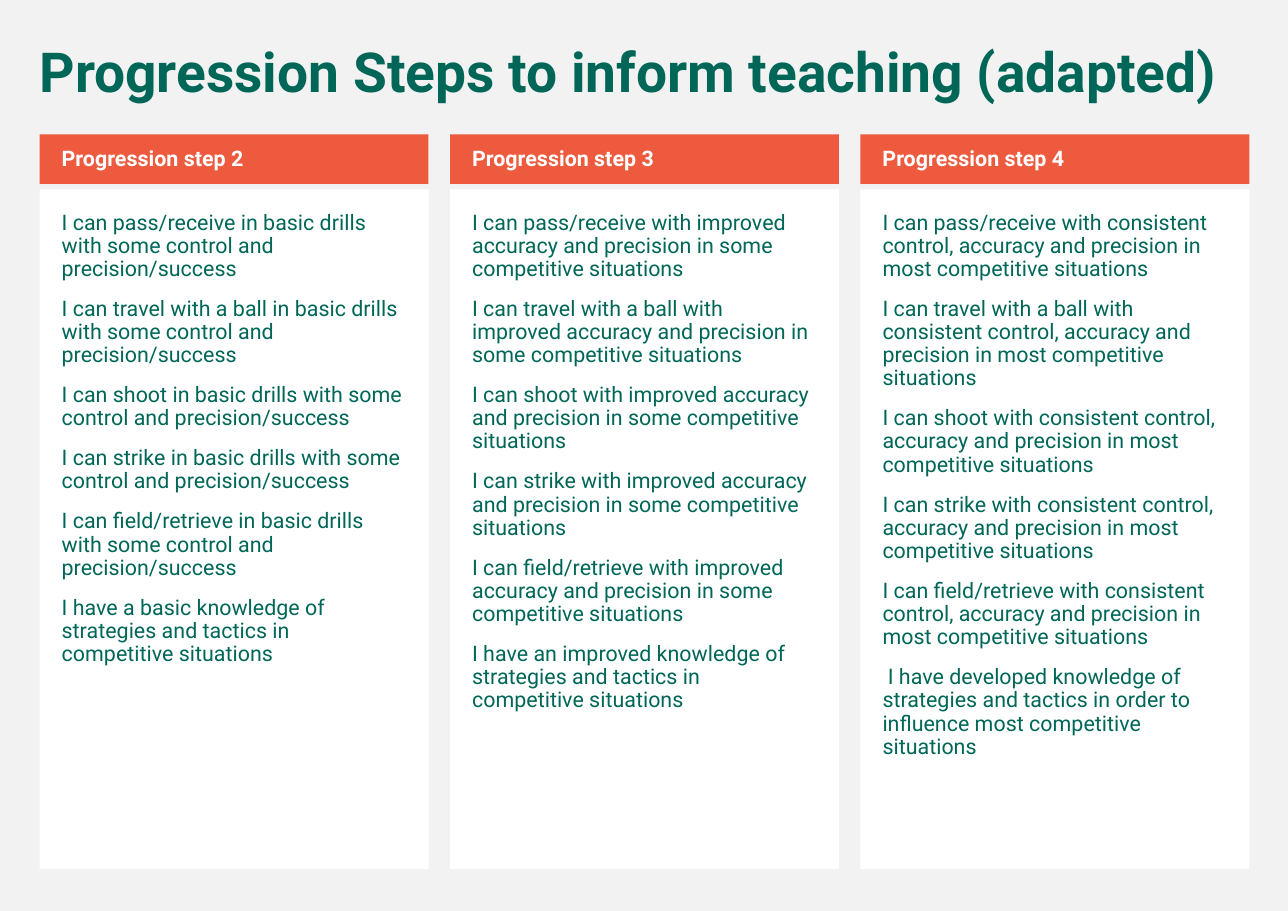
from pptx import Presentation
from pptx.dml.color import RGBColor
from pptx.enum.shapes import MSO_SHAPE
from pptx.enum.text import MSO_ANCHOR, MSO_AUTO_SIZE, PP_ALIGN
from pptx.oxml.ns import qn
from pptx.util import Inches, Pt

RECTANGLE = MSO_SHAPE.RECTANGLE
TOP, MIDDLE = MSO_ANCHOR.TOP, MSO_ANCHOR.MIDDLE
NO_AUTOFIT = MSO_AUTO_SIZE.NONE
LEFT = PP_ALIGN.LEFT

# Content
TITLE = "Progression Steps to inform teaching (adapted)"
STEPS = [
    ("Progression step 2", [
        "I can pass/receive in basic drills with some control and precision/success",
        "I can travel with a ball in basic drills with some control and precision/success",
        "I can shoot in basic drills with some control and precision/success",
        "I can strike in basic drills with some control and precision/success",
        "I can field/retrieve in basic drills with some control and precision/success",
        "I have a basic knowledge of strategies and tactics in competitive situations",
    ]),
    ("Progression step 3", [
        "I can pass/receive with improved accuracy and precision in some competitive situations",
        "I can travel with a ball with improved accuracy and precision in some competitive situations",
        "I can shoot with improved accuracy and precision in some competitive situations",
        "I can strike with improved accuracy and precision in some competitive situations",
        "I can field/retrieve with improved accuracy and precision in some competitive situations",
        "I have an improved knowledge of strategies and tactics in competitive situations",
    ]),
    ("Progression step 4", [
        "I can pass/receive with consistent control, accuracy and precision in most competitive situations",
        "I can travel with a ball with consistent control, accuracy and precision in most competitive situations",
        "I can shoot with consistent control, accuracy and precision in most competitive situations",
        "I can strike with consistent control, accuracy and precision in most competitive situations",
        "I can field/retrieve with consistent control, accuracy and precision in most competitive situations",
        " I have developed knowledge of strategies and tactics in order to influence most competitive situations",
    ]),
]

# Look
GREY, WHITE, ORANGE, GREEN = "F2F2F2", "FFFFFF", "ED5A3E", "006758"
FONT = "Roboto"
PARAGRAPH = {"line_spacing": 0.9, "space_before": Pt(11), "space_after": Pt(0),
             "alignment": LEFT}

# Layout in inches
FIRST_LEFT, LAST_LEFT, COLUMN_WIDTH = 0.36, 7.81, 3.53
COLUMN_STEP = (LAST_LEFT - FIRST_LEFT) / (len(STEPS) - 1)
HEADING_TOP, HEADING_HEIGHT = 1.22, 0.45
LIST_TOP, LIST_HEIGHT = 1.72, 6.17


def colour(hex_string):
    return RGBColor.from_string(hex_string)


def apply(target, values):
    for name, value in values.items():
        setattr(target, name, value)


def place(shape, *bounds):
    names = ("left", "top", "width", "height")
    apply(shape, dict(zip(names, map(Inches, bounds))))


def paint(shape, fill):
    shape.fill.solid()
    shape.fill.fore_color.rgb = colour(fill)
    shape.line.fill.background()


def write(shape, lines, size, ink, bold, anchor, insets):
    frame = shape.text_frame
    apply(frame, {"word_wrap": True, "auto_size": NO_AUTOFIT, "vertical_anchor": anchor})
    sides = ("margin_left", "margin_top", "margin_right", "margin_bottom")
    apply(frame, dict(zip(sides, map(Inches, insets))))
    for number, line in enumerate(lines):
        para = frame.add_paragraph() if number else frame.paragraphs[0]
        apply(para, PARAGRAPH)
        # No bullet and no hanging indent
        properties = para._p.get_or_add_pPr()
        properties.set("marL", "0")
        properties.set("indent", "0")
        properties.append(properties.makeelement(qn("a:buNone"), {}))
        span = para.add_run()
        span.text = line
        apply(span.font, {"name": FONT, "size": Pt(size), "bold": bold})
        span.font.color.rgb = colour(ink)


def main():
    deck = Presentation()
    apply(deck, {"slide_width": Inches(11.69), "slide_height": Inches(8.27)})
    # The comparison layout has a title and four body placeholders
    page = deck.slides.add_slide(deck.slide_layouts[4])
    page.background.fill.solid()
    page.background.fill.fore_color.rgb = colour(GREY)

    # Title
    title, *bodies = page.placeholders
    place(title, 0.26, 0.36, 11.08, 0.65)
    write(title, [TITLE], 36, GREEN, True, TOP, (0.1, 0.05, 0.1, 0.05))

    # Columns: a heading bar over a list of statements
    for index, (heading, statements) in enumerate(STEPS):
        left = FIRST_LEFT + index * COLUMN_STEP
        box = bodies[index]
        place(box, left, LIST_TOP, COLUMN_WIDTH, LIST_HEIGHT)
        paint(box, WHITE)
        write(box, statements, 14, GREEN, False, TOP, (0.2, 0.2, 0.2, 0.2))

        bar = page.shapes.add_shape(RECTANGLE, 0, 0, 0, 0)
        place(bar, left, HEADING_TOP, COLUMN_WIDTH, HEADING_HEIGHT)
        bar.shadow.inherit = False
        paint(bar, ORANGE)
        write(bar, [heading], 14, WHITE, True, MIDDLE, (0.2, 0.05, 0.1, 0.05))

    # Remove the placeholder left empty
    for spare in bodies[len(STEPS):]:
        spare.element.getparent().remove(spare.element)

    deck.save("out.pptx")


if __name__ == "__main__":
    main()
